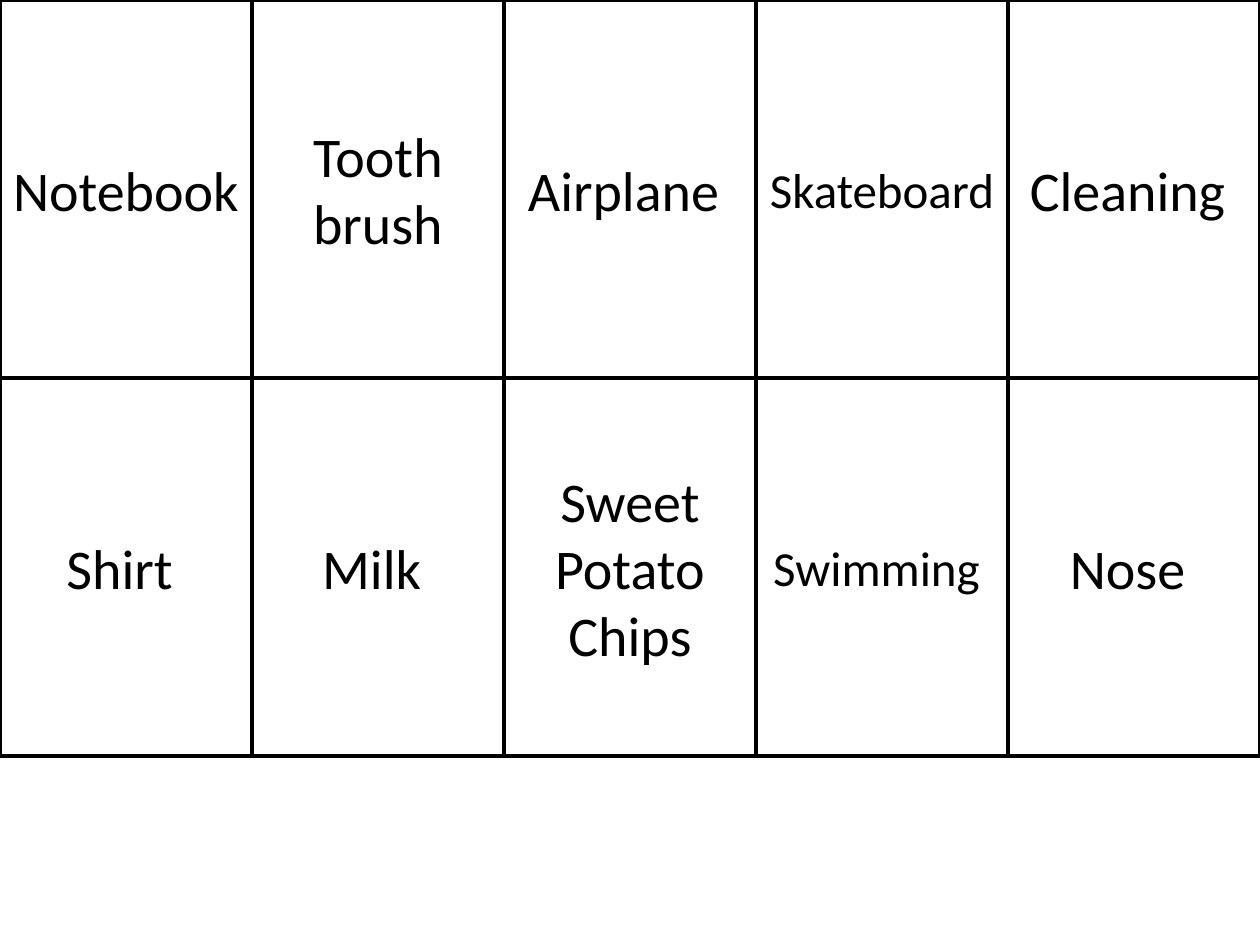
import pptx
import pptx.dml.color
import pptx.enum.shapes
import pptx.enum.text
import pptx.util
from pptx.util import Inches

COLORS = {"card": "FFFFFF", "ink": "000000"}
FONT = "Calibri"
WORD_SIZE, LONG_WORD_SIZE = 32, 28

# Each column holds its cards from top to bottom: (text, size).
COLUMNS = [
    [("Notebook", WORD_SIZE), ("Shirt ", WORD_SIZE)],
    [("Tooth\nbrush", WORD_SIZE), ("Milk ", WORD_SIZE)],
    [("Airplane ", WORD_SIZE), ("Sweet Potato Chips", WORD_SIZE)],
    [("Skateboard", LONG_WORD_SIZE), ("Swimming ", LONG_WORD_SIZE)],
    [("Cleaning ", WORD_SIZE), ("Nose ", WORD_SIZE)],
]


def color(name):
    return pptx.dml.color.RGBColor.from_string(COLORS[name])


def format_card(shape, text, size):
    shape.fill.solid()
    shape.fill.fore_color.rgb = color("card")
    shape.line.color.rgb = color("ink")
    shape.line.width = pptx.util.Pt(2)

    frame = shape.text_frame
    frame.text = text
    frame.word_wrap = True
    frame.auto_size = pptx.enum.text.MSO_AUTO_SIZE.NONE
    frame.vertical_anchor = pptx.enum.text.MSO_ANCHOR.MIDDLE
    for paragraph in frame.paragraphs:
        paragraph.alignment = pptx.enum.text.PP_ALIGN.CENTER
        paragraph.space_before = pptx.util.Pt(0)
        paragraph.font.name = FONT
        paragraph.font.size = pptx.util.Pt(size)
        paragraph.font.color.rgb = color("ink")


def add_card_grid(slide, left, top, width, height):
    """Fill the box with equal cards; the first card is the slide title."""
    card_width = width // len(COLUMNS)
    card_height = height // len(COLUMNS[0])
    for column, cards in enumerate(COLUMNS):
        for row, (text, size) in enumerate(cards):
            box = (left + column * card_width, top + row * card_height,
                   card_width, card_height)
            if column == row == 0:
                shape = slide.shapes.title
                shape.left, shape.top, shape.width, shape.height = box
            else:
                shape = slide.shapes.add_shape(
                    pptx.enum.shapes.MSO_SHAPE.RECTANGLE, *box)
                shape.shadow.inherit = False
            format_card(shape, text, size)


def main():
    presentation = pptx.Presentation()
    presentation.slide_width = Inches(10)
    presentation.slide_height = Inches(7.5)
    title_only = presentation.slide_layouts[5]
    slide = presentation.slides.add_slide(title_only)
    add_card_grid(slide, Inches(0), Inches(0), Inches(10), Inches(6))
    presentation.save("out.pptx")


if __name__ == "__main__":
    main()
